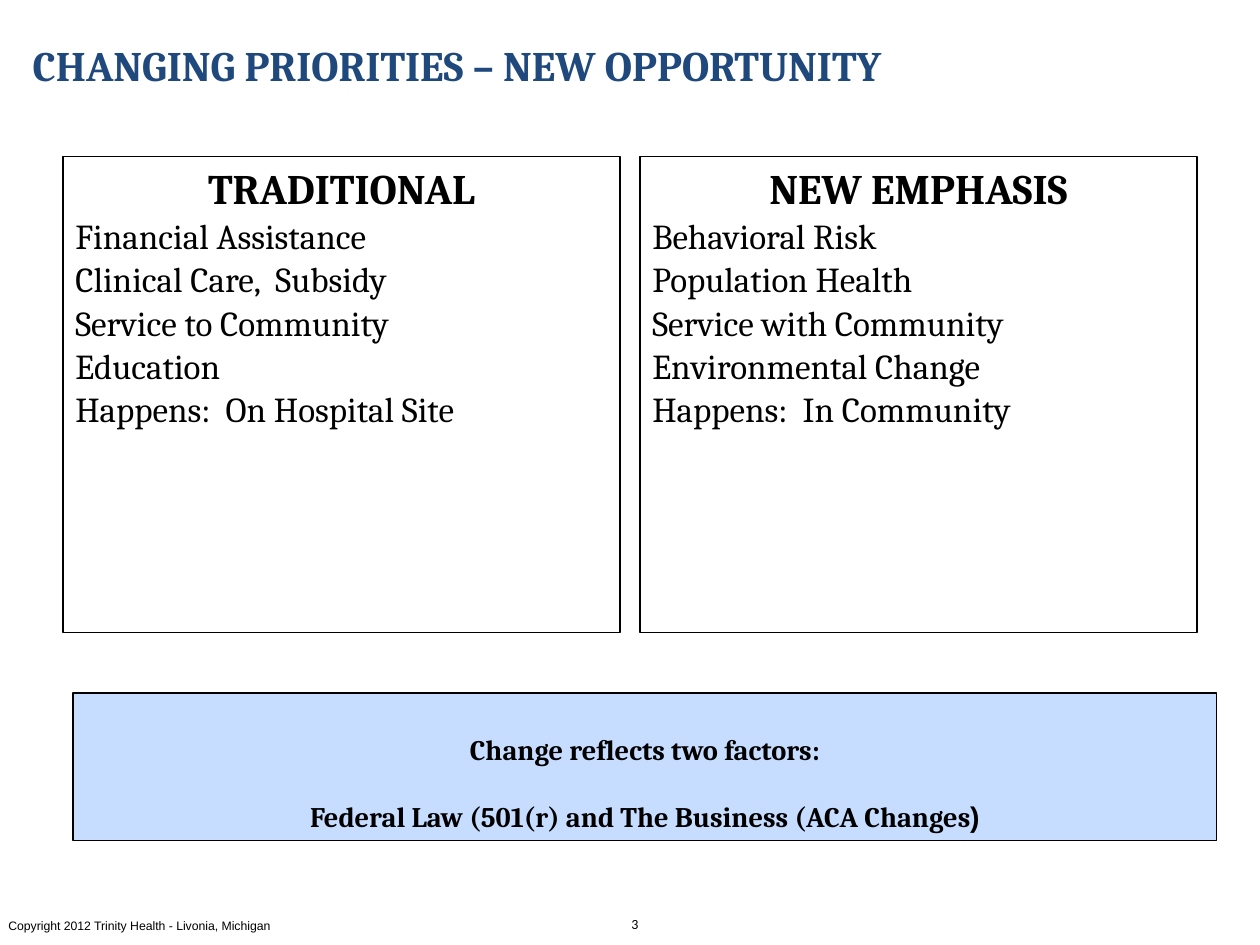
from pptx import Presentation
from pptx.dml.color import RGBColor
from pptx.enum.shapes import MSO_SHAPE
from pptx.enum.text import MSO_ANCHOR, PP_ALIGN
from pptx.util import Cm, Pt

BLACK = RGBColor(0x00, 0x00, 0x00)
WHITE = RGBColor(0xFF, 0xFF, 0xFF)
NAVY = RGBColor(0x1F, 0x49, 0x7D)
SKY = RGBColor(0xC7, 0xDD, 0xFF)

deck = Presentation()
deck.slide_width, deck.slide_height = Cm(25.4), Cm(19.05)
slide = deck.slides.add_slide(deck.slide_layouts[6])


def style(para, size, face="Cambria", color=BLACK, bold=False, align=PP_ALIGN.LEFT):
    para.alignment = align
    para.font.size = Pt(size)
    para.font.name = face
    para.font.color.rgb = color
    para.font.bold = bold


def panel(left, top, width, height, fill):
    box = slide.shapes.add_shape(
        MSO_SHAPE.RECTANGLE, Cm(left), Cm(top), Cm(width), Cm(height))
    box.shadow.inherit = False
    box.fill.solid()
    box.fill.fore_color.rgb = fill
    box.line.color.rgb = BLACK
    box.line.width = Pt(0.75)
    return box.text_frame


labels = [
    ("Copyright 2012 Trinity Health - Livonia, Michigan",
     (-0.08, 18.39, 9.32, 0.64), MSO_ANCHOR.TOP, (7, "Arial")),
    ("3", (10.16, 18.34, 5.28, 0.64), MSO_ANCHOR.TOP,
     (8, "Calibri", BLACK, False, PP_ALIGN.CENTER)),
    ("CHANGING PRIORITIES – NEW OPPORTUNITY",
     (0.41, 0, 22.86, 2.59), MSO_ANCHOR.MIDDLE, (24, "Cambria", NAVY, True)),
]
for text, place, anchor, look in labels:
    frame = slide.shapes.add_textbox(*map(Cm, place)).text_frame
    frame.word_wrap = True
    frame.vertical_anchor = anchor
    frame.text = text
    style(frame.paragraphs[0], *look)

lists = [
    ["TRADITIONAL", "Financial Assistance", "Clinical Care,  Subsidy",
     "Service to Community", "Education", "Happens:  On Hospital Site"],
    ["NEW EMPHASIS", "Behavioral Risk", "Population Health",
     "Service with Community", "Environmental Change", "Happens:  In Community"],
]
for col, lines in enumerate(lists):
    frame = panel(1.27 + col * 11.63, 3.15, 11.23, 9.6, WHITE)
    frame.word_wrap = True
    frame.vertical_anchor = MSO_ANCHOR.TOP
    frame.text = "\n".join(lines)
    head, *items = frame.paragraphs
    style(head, 24, bold=True, align=PP_ALIGN.CENTER)
    for item in items:
        style(item, 20)
        item.space_before = Pt(0.8)

frame = panel(1.47, 13.97, 23.06, 2.97, SKY)
frame.word_wrap = False
frame.vertical_anchor = MSO_ANCHOR.MIDDLE
frame.text = ("Change reflects two factors:\n"
              "Federal Law (501(r) and The Business (ACA Changes")
end = frame.paragraphs[1].add_run()
end.text = ")"
end.font.name = "Arial"
for para in frame.paragraphs:
    style(para, 28, bold=True, align=PP_ALIGN.CENTER)
    for run in para.runs:
        run.font._element.set("baseline", "-25000")

deck.save("out.pptx")
